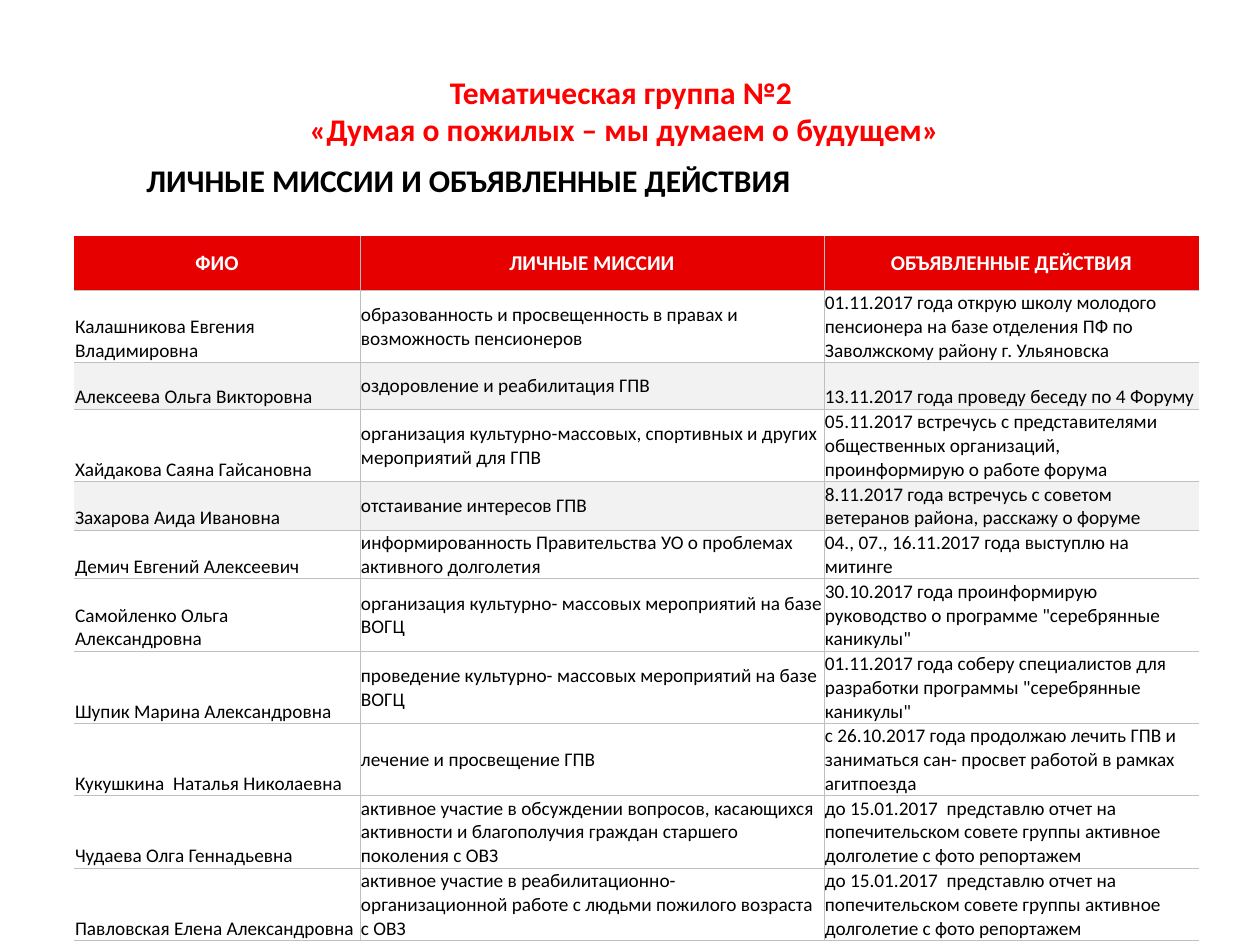
from lxml import etree
from pptx import Presentation
from pptx.dml.color import RGBColor
from pptx.enum.text import MSO_ANCHOR, MSO_AUTO_SIZE, PP_ALIGN
from pptx.oxml.ns import qn
from pptx.util import Emu, Pt

PX = 914400 // 126
TITLE_ONLY = 5
FONT = "Calibri"
NO_STYLE = "{2D5ABB26-0587-4C30-8999-92F81FD0307C}"
CENTER, LEFT = PP_ALIGN.CENTER, PP_ALIGN.LEFT
MIDDLE, BOTTOM = MSO_ANCHOR.MIDDLE, MSO_ANCHOR.BOTTOM
NO_FIT, FIT_SHAPE = MSO_AUTO_SIZE.NONE, MSO_AUTO_SIZE.SHAPE_TO_FIT_TEXT

COLORS = {
    "title": "FF0000",
    "header": "E60000",
    "band": "F2F2F2",
    "grid": "BFBFBF",
    "text": "000000",
    "white": "FFFFFF",
}

TITLE = ["Тематическая группа №2 ", "«Думая о пожилых – мы думаем о будущем»"]
SUBTITLE = "ЛИЧНЫЕ МИССИИ И ОБЪЯВЛЕННЫЕ ДЕЙСТВИЯ"
HEADERS = ["ФИО", "ЛИЧНЫЕ МИССИИ", "ОБЪЯВЛЕННЫЕ ДЕЙСТВИЯ"]
REPORT = ("до 15.01.2017  представлю отчет на попечительском совете группы "
          "активное долголетие с фото репортажем")
MEMBERS = [
    ("Калашникова Евгения Владимировна",
     "образованность и просвещенность в правах и возможность пенсионеров",
     "01.11.2017 года открую школу молодого пенсионера на базе отделения ПФ "
     "по Заволжскому району г. Ульяновска"),
    ("Алексеева Ольга Викторовна",
     "оздоровление и реабилитация ГПВ",
     "13.11.2017 года проведу беседу по 4 Форуму"),
    ("Хайдакова Саяна Гайсановна",
     "организация культурно-массовых, спортивных и других мероприятий для ГПВ",
     "05.11.2017 встречусь с представителями общественных организаций, "
     "проинформирую о работе форума"),
    ("Захарова Аида Ивановна",
     "отстаивание интересов ГПВ",
     "8.11.2017 года встречусь с советом ветеранов района, расскажу о форуме"),
    ("Демич Евгений Алексеевич",
     "информированность Правительства УО о проблемах активного долголетия",
     "04., 07., 16.11.2017 года выступлю на митинге"),
    ("Самойленко Ольга Александровна",
     "организация культурно- массовых мероприятий на базе ВОГЦ",
     "30.10.2017 года проинформирую руководство о программе "
     "\"серебрянные каникулы\""),
    ("Шупик Марина Александровна",
     "проведение культурно- массовых мероприятий на базе ВОГЦ",
     "01.11.2017 года соберу специалистов для разработки программы "
     "\"серебрянные каникулы\""),
    ("Кукушкина  Наталья Николаевна",
     "лечение и просвещение ГПВ",
     "с 26.10.2017 года продолжаю лечить ГПВ и заниматься сан- просвет "
     "работой в рамках агитпоезда"),
    ("Чудаева Олга Геннадьевна",
     "активное участие в обсуждении вопросов, касающихся активности и "
     "благополучия граждан старшего поколения с ОВЗ",
     REPORT),
    ("Павловская Елена Александровна",
     "активное участие в реабилитационно- организационной работе с людьми "
     "пожилого возраста с ОВЗ",
     REPORT),
]
BANDED_ROWS = {2, 4}
COLUMN_WIDTHS = [286, 464, 375]
HEADER_HEIGHT, SHORT_ROW, TALL_ROW = 54, 47, 71
SHORT_ROWS = {2, 4, 5}


def px(*lengths):
    return [Emu(length * PX) for length in lengths]


def write(frame, lines, size, color, bold=False, align=LEFT):
    """Fill a text frame with one paragraph per line."""
    for index, line in enumerate(lines):
        para = frame.paragraphs[0] if index == 0 else frame.add_paragraph()
        para.text = line
        para.alignment = align
        font = para.font
        font.name, font.size, font.bold = FONT, Pt(size), bold
        font.color.rgb = RGBColor.from_string(COLORS[color])


def add_title(page, box):
    title = page.shapes.title
    title.left, title.top, title.width, title.height = px(*box)
    frame = title.text_frame
    frame.word_wrap, frame.auto_size = True, NO_FIT
    frame.vertical_anchor = MIDDLE
    write(frame, TITLE, 18, "title", bold=True, align=CENTER)


def add_subtitle(page, box):
    frame = page.shapes.add_textbox(*px(*box)).text_frame
    frame.word_wrap, frame.auto_size = False, FIT_SHAPE
    write(frame, [SUBTITLE], 18, "text", bold=True)


def add_borders(cell, sides):
    """Draw thin lines on the given sides; call before the fill is set."""
    properties = cell._tc.get_or_add_tcPr()
    for side in sides:
        line = etree.SubElement(properties, qn(f"a:ln{side}"), w=str(Pt(0.5)))
        fill = etree.SubElement(line, qn("a:solidFill"))
        etree.SubElement(fill, qn("a:srgbClr"), val=COLORS["grid"])


def format_cell(cell, row, column):
    # Only inner vertical lines; the header has no top line
    sides = ["L"] * (column > 0) + ["R"] * (column < len(HEADERS) - 1)
    add_borders(cell, sides + ["T"] * (row > 0) + ["B"])

    fill = "header" if row == 0 else "band" if row in BANDED_ROWS else None
    if fill:
        cell.fill.solid()
        cell.fill.fore_color.rgb = RGBColor.from_string(COLORS[fill])
    else:
        cell.fill.background()

    cell.vertical_anchor = MIDDLE if row == 0 or column == 1 else BOTTOM
    if row == 0:
        margins = px(9, 5, 9, 5)
    else:
        margins = px(1, 1, 1, 0)
    (cell.margin_left, cell.margin_top,
     cell.margin_right, cell.margin_bottom) = margins


def add_missions_table(page, left, top):
    rows = [HEADERS, *MEMBERS]
    heights = [HEADER_HEIGHT] + [
        SHORT_ROW if row in SHORT_ROWS else TALL_ROW
        for row in range(1, len(rows))
    ]
    box = px(left, top, sum(COLUMN_WIDTHS), sum(heights))
    table = page.shapes.add_table(len(rows), len(HEADERS), *box).table
    table.horz_banding = False
    table._tbl.tblPr.find(qn("a:tableStyleId")).text = NO_STYLE

    for column, width in zip(table.columns, px(*COLUMN_WIDTHS)):
        column.width = width
    for row, height in zip(table.rows, px(*heights)):
        row.height = height

    for row, texts in enumerate(rows):
        for column, text in enumerate(texts):
            cell = table.cell(row, column)
            format_cell(cell, row, column)
            if row == 0:
                write(cell.text_frame, [text], 12, "white", True, CENTER)
            else:
                write(cell.text_frame, [text], 11, "text")


def main():
    deck = Presentation()
    deck.slide_width, deck.slide_height = px(1260, 945)
    page = deck.slides.add_slide(deck.slide_layouts[TITLE_ONLY])
    add_missions_table(page, 74, 236)
    add_subtitle(page, (134, 155, 677, 50))
    add_title(page, (164, 66, 921, 89))
    deck.save("out.pptx")


if __name__ == "__main__":
    main()
